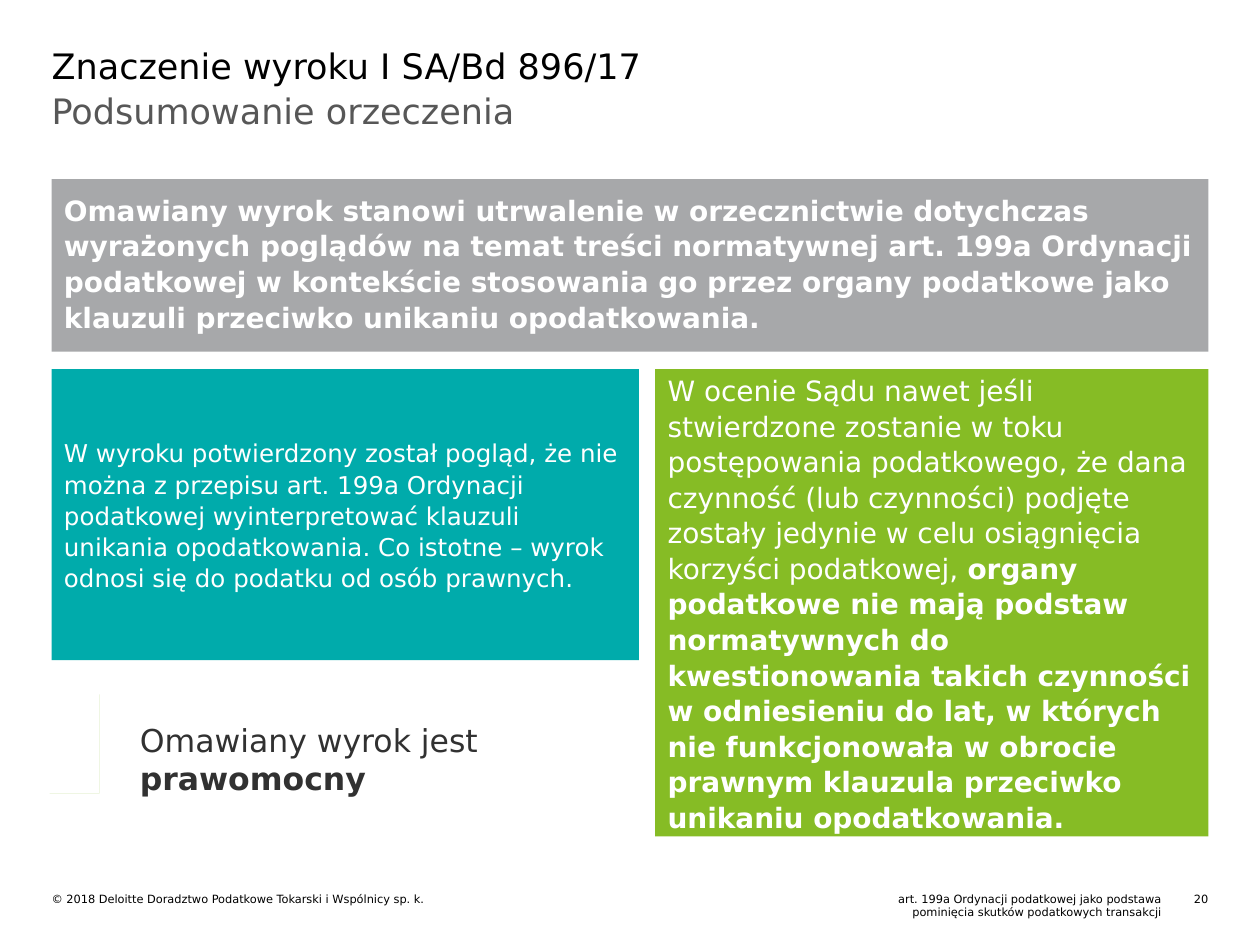
from math import cos, pi, sin

from pptx import Presentation
from pptx.dml.color import RGBColor
from pptx.enum.shapes import MSO_SHAPE
from pptx.enum.text import MSO_ANCHOR, PP_ALIGN
from pptx.util import Cm, Pt

FONT = "DejaVu Sans"
BLACK = RGBColor(0x00, 0x00, 0x00)
WHITE = RGBColor(0xFF, 0xFF, 0xFF)
DARK = RGBColor(0x31, 0x31, 0x31)
SUBTITLE_GRAY = RGBColor(0x57, 0x57, 0x57)
PANEL_GRAY = RGBColor(0xA7, 0xA8, 0xAA)
TEAL = RGBColor(0x00, 0xAB, 0xAB)
GREEN = RGBColor(0x86, 0xBC, 0x25)

LEFT, WIDTH = 1.04, 23.32
RIGHT_COLUMN, RIGHT_WIDTH = 13.21, 11.15
PANEL_TOP = 7.44
FOOTER_TOP = 17.98

ICON_OUTLINE = [
    (1.52, 16.15), (1.47, 16.10), (1.47, 15.88), (1.52, 15.82), (1.70, 15.82),
    (1.70, 15.37), (1.57, 15.37), (1.52, 15.32), (1.52, 15.09), (1.57, 15.04),
    (1.98, 15.04), (2.03, 15.09), (2.03, 15.82), (2.21, 15.82), (2.26, 15.88),
    (2.26, 16.10), (2.21, 16.15),
]
ICON_HOLE = [
    (1.57, 16.05), (2.16, 16.05), (2.16, 15.93), (1.98, 15.93), (1.93, 15.88),
    (1.93, 15.14), (1.65, 15.14), (1.65, 15.27), (1.75, 15.27), (1.80, 15.32),
    (1.80, 15.88), (1.75, 15.93), (1.57, 15.93),
]


def write(shape, text, size, color, bold_tail="", bold=False,
          align=PP_ALIGN.LEFT, anchor=MSO_ANCHOR.TOP, margin=0, spacing=None):
    frame = shape.text_frame
    frame.word_wrap = True
    frame.vertical_anchor = anchor
    frame.margin_left = frame.margin_right = Cm(margin)
    frame.margin_top = frame.margin_bottom = Cm(margin)
    para = frame.paragraphs[0]
    para.text = text
    para.alignment = align
    para.line_spacing = spacing
    para.font.name = FONT
    para.font.size = Pt(size)
    para.font.color.rgb = color
    para.font.bold = bold
    if bold_tail:
        span = para.add_run()
        span.text = bold_tail
        span.font.bold = True


def place_title(page, text):
    title = page.shapes.title
    title.left, title.top = Cm(LEFT), Cm(0.89)
    title.width, title.height = Cm(WIDTH), Cm(1.12)
    write(title, text, 20, BLACK)


def add_text(page, left, top, width, height, text, size, color, **style):
    box = page.shapes.add_textbox(Cm(left), Cm(top), Cm(width), Cm(height))
    write(box, text, size, color, **style)


def add_panel(page, left, top, width, height, fill, text, size, **style):
    panel = page.shapes.add_shape(
        MSO_SHAPE.RECTANGLE, Cm(left), Cm(top), Cm(width), Cm(height))
    panel.shadow.inherit = False
    panel.fill.solid()
    panel.fill.fore_color.rgb = fill
    panel.line.fill.background()
    write(panel, text, size, WHITE, margin=0.25, spacing=1.06, **style)


def circle(center_x, center_y, radius, steps=36):
    angles = [2 * pi * step / steps for step in range(steps)]
    return [(center_x + radius * cos(angle), center_y + radius * sin(angle))
            for angle in angles]


def add_info_icon(page):
    contours = [ICON_OUTLINE, ICON_HOLE,
                circle(1.88, 14.68, 0.23), circle(1.88, 14.68, 0.12)]
    builder = page.shapes.build_freeform(*contours[0][0], scale=Cm(1))
    for contour in contours:
        builder.move_to(*contour[0])
        builder.add_line_segments(contour[1:], close=True)
    icon = builder.convert_to_shape()
    icon.shadow.inherit = False
    icon.fill.solid()
    icon.fill.fore_color.rgb = GREEN
    icon.line.fill.background()


def add_footer(page):
    add_text(page, LEFT, FOOTER_TOP, RIGHT_WIDTH, 0.28,
             "© 2018 Deloitte Doradztwo Podatkowe Tokarski i Wspólnicy sp. k.",
             6.5, BLACK)
    add_text(page, RIGHT_COLUMN, FOOTER_TOP, 10.21, 0.56,
             "art. 199a Ordynacji podatkowej jako podstawa\v"
             "pominięcia skutków podatkowych transakcji",
             6.5, BLACK, align=PP_ALIGN.RIGHT)
    add_text(page, 23.72, FOOTER_TOP, 0.64, 0.28, "20", 6.5, BLACK,
             align=PP_ALIGN.RIGHT)


def main():
    deck = Presentation()
    deck.slide_width, deck.slide_height = Cm(25.4), Cm(19.05)
    page = deck.slides.add_slide(deck.slide_layouts[5])

    place_title(page, "Znaczenie wyroku I SA/Bd 896/17")
    add_text(page, LEFT, 1.8, WIDTH, 2.11, "Podsumowanie orzeczenia",
             20, SUBTITLE_GRAY)
    add_panel(
        page, LEFT, 3.61, WIDTH, 3.48, PANEL_GRAY,
        "Omawiany wyrok stanowi utrwalenie w orzecznictwie dotychczas "
        "wyrażonych poglądów na temat treści normatywnej art. 199a Ordynacji "
        "podatkowej w kontekście stosowania go przez organy podatkowe jako "
        "klauzuli przeciwko unikaniu opodatkowania.", 16, bold=True)
    add_panel(
        page, LEFT, PANEL_TOP, 11.84, 5.87, TEAL,
        "W wyroku potwierdzony został pogląd, że nie można z przepisu art. "
        "199a Ordynacji podatkowej wyinterpretować klauzuli unikania "
        "opodatkowania. Co istotne – wyrok odnosi się do podatku od osób "
        "prawnych.", 14, anchor=MSO_ANCHOR.MIDDLE)
    add_panel(
        page, RIGHT_COLUMN, PANEL_TOP, RIGHT_WIDTH, 9.42, GREEN,
        "W ocenie Sądu nawet jeśli stwierdzone zostanie w toku postępowania "
        "podatkowego, że dana czynność (lub czynności) podjęte zostały "
        "jedynie w celu osiągnięcia korzyści podatkowej, ", 16,
        bold_tail="organy podatkowe nie mają podstaw normatywnych do "
        "kwestionowania takich czynności w odniesieniu do lat, w których nie "
        "funkcjonowała w obrocie prawnym klauzula przeciwko unikaniu "
        "opodatkowania.", anchor=MSO_ANCHOR.MIDDLE)
    add_info_icon(page)
    add_text(page, 2.82, 14.53, 9.83, 1.55, "Omawiany wyrok jest ", 18, DARK,
             bold_tail="prawomocny")
    add_footer(page)
    deck.save("out.pptx")


if __name__ == "__main__":
    main()
